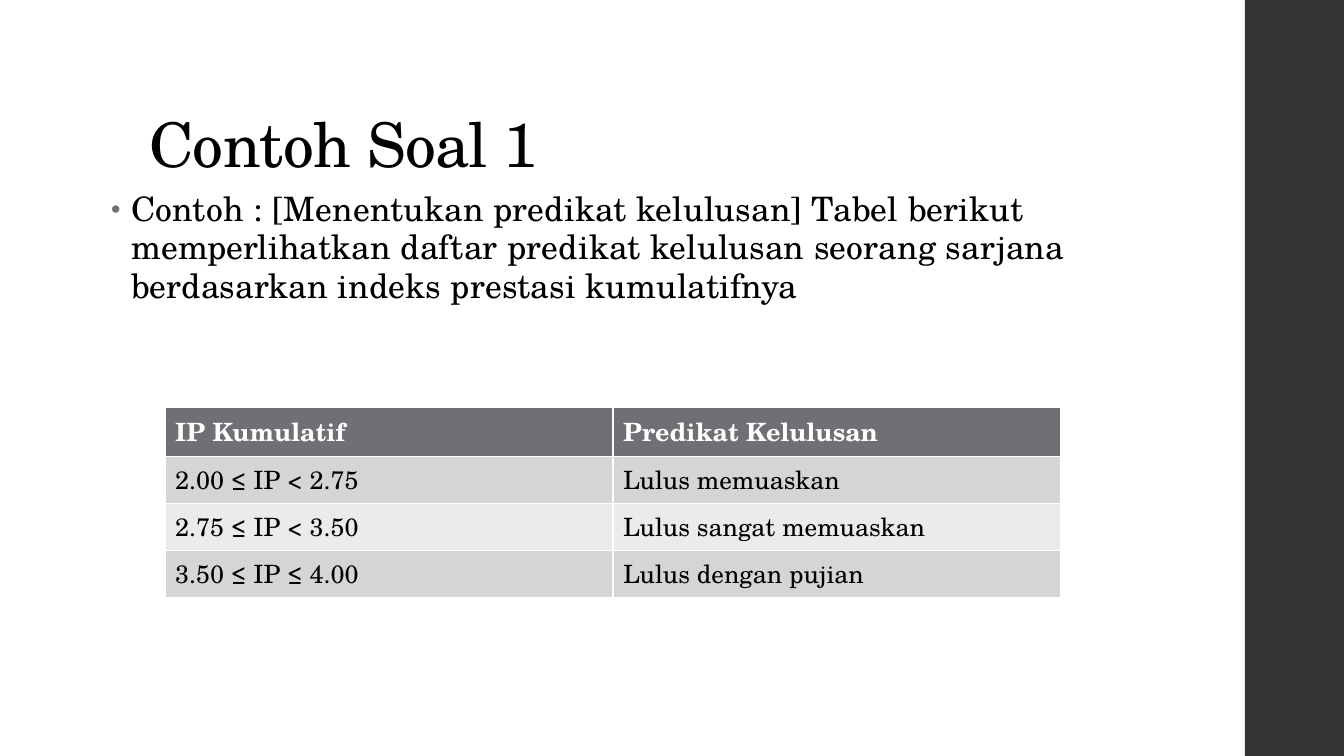
"""Build a slide with a worked example and a table of graduation grades."""
import dataclasses

import lxml.etree
import pptx
import pptx.dml.color
import pptx.enum.shapes
import pptx.enum.text
import pptx.oxml.ns
import pptx.util


@dataclasses.dataclass(frozen=True)
class Theme:
    font: str = "TeX Gyre Schola"
    ink: str = "000000"
    paper: str = "FFFFFF"
    sidebar: str = "353537"
    accent: str = "6F6F74"
    bands: tuple = ("D5D5D6", "EBEBEB")
    title_size: int = 44
    body_size: int = 24
    table_size: int = 18


def px(n):
    return pptx.util.Emu(round(n * 914400 / 100.8))


def rgb(value):
    return pptx.dml.color.RGBColor.from_string(value)


class SlideBuilder:
    def __init__(self, prs, theme):
        self.theme = theme
        self.s = prs.slides.add_slide(prs.slide_layouts[1])

    def format_runs(self, p, size, color, bold=False, spacing=0):
        for r in p.runs:
            r.font.name = self.theme.font
            r.font.size = pptx.util.Pt(size)
            r.font.bold = bold
            r.font.color.rgb = rgb(color)
            if spacing:
                r.font._element.set("spc", str(spacing))

    def place(self, sp, box, text, anchor):
        sp.left, sp.top, sp.width, sp.height = map(px, box)
        tf = sp.text_frame
        tf.text = text
        tf.word_wrap = True
        tf.auto_size = pptx.enum.text.MSO_AUTO_SIZE.NONE
        tf.vertical_anchor = anchor
        p = tf.paragraphs[0]
        p.alignment = pptx.enum.text.PP_ALIGN.LEFT
        p.space_before = pptx.util.Pt(0)
        return p

    def title(self, box, text):
        p = self.place(self.s.shapes.title, box, text, pptx.enum.text.MSO_ANCHOR.BOTTOM)
        p.line_spacing = 0.9
        self.format_runs(p, self.theme.title_size, self.theme.ink, spacing=-50)

    def body(self, box, text):
        p = self.place(self.s.placeholders[1], box, text, pptx.enum.text.MSO_ANCHOR.TOP)
        self.bullet(p)
        p.line_spacing = 0.95
        p.space_after = pptx.util.Pt(2)
        self.format_runs(p, self.theme.body_size, self.theme.ink, spacing=10)

    def bullet(self, p):
        qn = pptx.oxml.ns.qn
        pPr = p._p.get_or_add_pPr()
        pPr.set("marL", str(px(20)))
        pPr.set("indent", str(-px(20)))
        color = lxml.etree.SubElement(pPr, qn("a:buClr"))
        lxml.etree.SubElement(color, qn("a:srgbClr"), val=self.theme.accent)
        lxml.etree.SubElement(pPr, qn("a:buSzPct"), val="80000")
        lxml.etree.SubElement(pPr, qn("a:buFont"), typeface="Arial")
        lxml.etree.SubElement(pPr, qn("a:buChar"), char="•")

    def rect(self, box, color):
        sp = self.s.shapes.add_shape(pptx.enum.shapes.MSO_SHAPE.RECTANGLE, *map(px, box))
        sp.shadow.inherit = False
        sp.fill.solid()
        sp.fill.fore_color.rgb = rgb(color)
        sp.line.fill.background()

    def table(self, box, rows):
        shape = self.s.shapes.add_table(len(rows), len(rows[0]), *map(px, box))
        for i, row in enumerate(rows):
            header = i == 0
            fill = self.theme.accent if header else self.theme.bands[(i - 1) % 2]
            color = self.theme.paper if header else self.theme.ink
            for j, text in enumerate(row):
                cell = shape.table.cell(i, j)
                cell.text = text
                cell.fill.solid()
                cell.fill.fore_color.rgb = rgb(fill)
                p = cell.text_frame.paragraphs[0]
                self.format_runs(p, self.theme.table_size, color, bold=header)


def main():
    prs = pptx.Presentation()
    prs.slide_width, prs.slide_height = px(1344), px(756)
    theme = Theme()
    slide = SlideBuilder(prs, theme)
    slide.rect((1245, 0, 99, 756), theme.sidebar)
    slide.title((139, 40, 1068, 146), "Contoh Soal 1")
    slide.body(
        (101, 186, 1025, 490),
        "Contoh : [Menentukan predikat kelulusan] Tabel berikut memperlihatkan "
        "daftar predikat kelulusan seorang sarjana berdasarkan indeks prestasi "
        "kumulatifnya",
    )
    slide.table(
        (165, 407, 896, 164),
        [
            ("IP Kumulatif", "Predikat Kelulusan"),
            ("2.00 ≤ IP < 2.75", "Lulus memuaskan"),
            ("2.75 ≤ IP < 3.50", "Lulus sangat memuaskan"),
            ("3.50 ≤ IP ≤ 4.00", "Lulus dengan pujian"),
        ],
    )
    prs.save("out.pptx")


if __name__ == "__main__":
    main()
